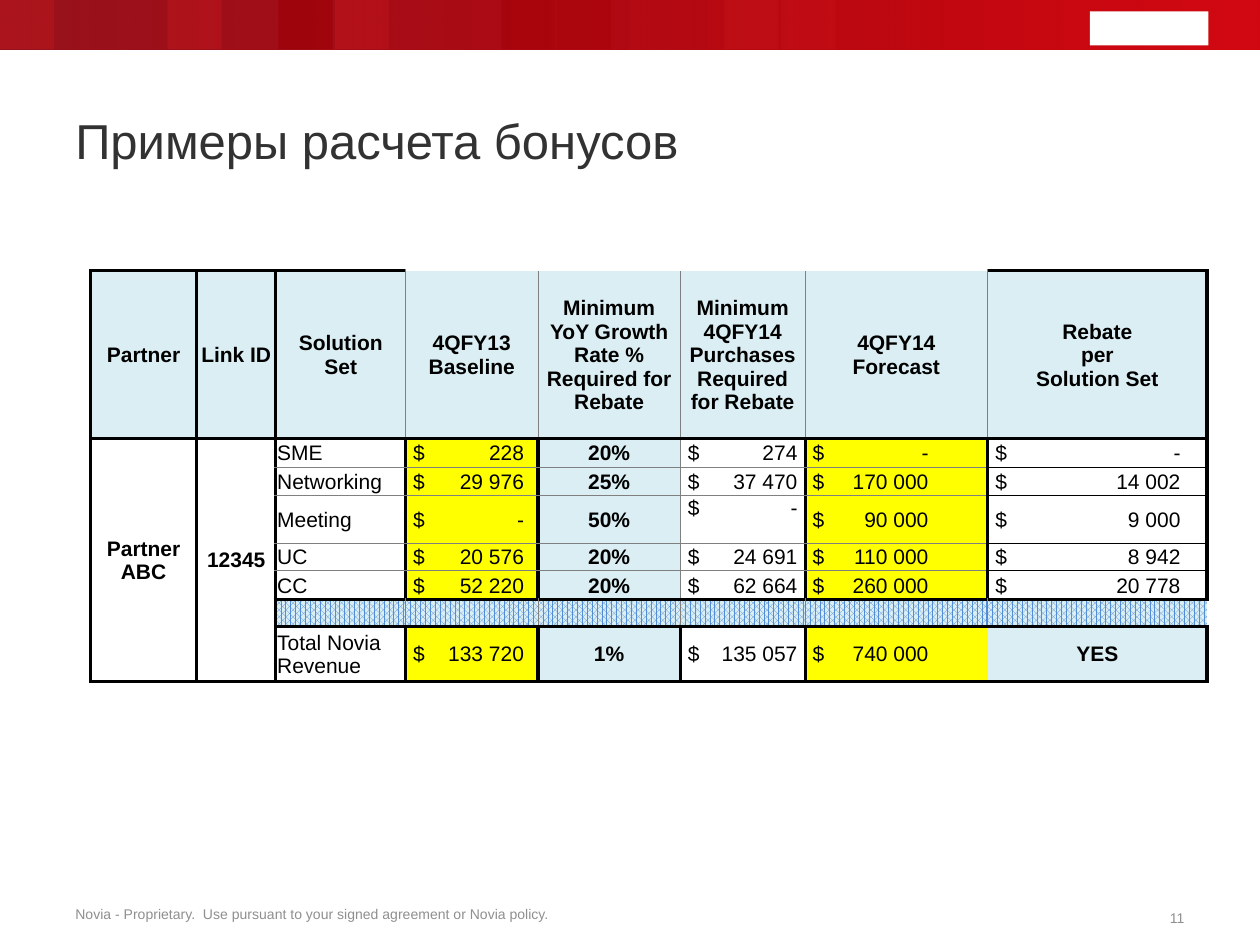
"""Build the slide with the partner rebate calculation table."""
from lxml import etree
from pptx import Presentation
from pptx.dml.color import RGBColor
from pptx.enum.dml import MSO_PATTERN
from pptx.enum.shapes import MSO_SHAPE
from pptx.enum.text import MSO_ANCHOR, PP_ALIGN
from pptx.oxml.ns import qn
from pptx.util import Inches, Pt

RECTANGLE = MSO_SHAPE.RECTANGLE
DOTS = MSO_PATTERN.PERCENT_75
TOP, MIDDLE, BOTTOM = MSO_ANCHOR.TOP, MSO_ANCHOR.MIDDLE, MSO_ANCHOR.BOTTOM
LEFT, CENTER, RIGHT = PP_ALIGN.LEFT, PP_ALIGN.CENTER, PP_ALIGN.RIGHT

COLORS = {
    "dark red": "91050F", "red": "D10811", "light stripe": "FF4747", "dark stripe": "990000",
    "title": "323232", "footer": "8F8F8F", "black": "000000", "gray": "808080",
    "white": "FFFFFF", "pale blue": "DAEEF3", "blue": "538DD5", "yellow": "FFFF00",
}
RGB = {name: RGBColor.from_string(value) for name, value in COLORS.items()}

deck = Presentation()
deck.slide_width, deck.slide_height = Inches(10), Inches(7.5)
page = deck.slides.add_slide(deck.slide_layouts[6])


def add_bar(left, width, color=None, top=-0.01, height=0.4):
    bar = page.shapes.add_shape(RECTANGLE, Inches(left), Inches(top), Inches(width), Inches(height))
    bar.shadow.inherit = False
    bar.line.fill.background()
    if color:
        bar.fill.solid()
        bar.fill.fore_color.rgb = RGB[color]
        return
    bar.fill.gradient()
    bar.fill.gradient_angle = 0
    for stop, name in zip(bar.fill.gradient_stops, ("dark red", "red")):
        stop.color.rgb = RGB[name]
    first_color = next(bar.fill._xPr.iter(qn("a:srgbClr")))
    etree.SubElement(first_color, qn("a:alpha"), val="76000")


def style_paragraph(para, size, color, align=LEFT, bold=False):
    para.alignment = align
    para.font.name = "Arial"
    para.font.size = Pt(size)
    para.font.bold = bold
    para.font.color.rgb = RGB[color]


add_bar(0, 10)
stripes = [(14, "light"), (13, "light"), (10, "dark"), (9, "dark"),
           (6, "light"), (5, "dark"), (3, "light"), (0, "light")]
for step, tone in stripes:
    add_bar(round(step * 0.4425, 2), 0.43, f"{tone} stripe")
add_bar(0, 10)
add_bar(8.65, 0.94, "white", 0.09, 0.27)

texts = [
    ("Novia - Proprietary.  Use pursuant to your signed agreement or Novia policy.",
     (0.5, 7.15, 4.07, 0.22), 8, "footer", LEFT, MIDDLE, False),
    ("11", (9.16, 7.18, 0.34, 0.22), 8, "footer", RIGHT, MIDDLE, False),
    ("Примеры расчета бонусов", (0.5, 0.48, 9, 0.92), 28, "title", LEFT, BOTTOM, True),
]
for text, place, size, color, align, anchor, wrap in texts:
    box = page.shapes.add_textbox(*map(Inches, place))
    box.text_frame.word_wrap = wrap
    box.text_frame.vertical_anchor = anchor
    para = box.text_frame.paragraphs[0]
    para.text = text
    para.line_spacing = 0.9
    style_paragraph(para, size, color, align)

rows = [
    ["Partner", "Link ID", "Solution\vSet", "4QFY13\vBaseline",
     "Minimum\vYoY Growth Rate %\vRequired for Rebate",
     "Minimum 4QFY14 Purchases\vRequired for Rebate", "4QFY14\vForecast",
     "Rebate\vper\vSolution Set"],
    ["Partner ABC", "12345", "SME", "228", "20%", "274", "-", "-"],
    ["", "", "Networking", "29 976", "25%", "37 470", "170 000", "14 002"],
    ["", "", "Meeting", "-", "50%", "-", "90 000", "9 000"],
    ["", "", "UC", "20 576", "20%", "24 691", "110 000", "8 942"],
    ["", "", "CC", "52 220", "20%", "62 664", "260 000", "20 778"],
    [""] * 8,
    ["", "", "Total Novia Revenue", "133 720", "1%", "135 057", "740 000", "YES"],
]
widths = [0.84, 0.63, 1.03, 1.05, 1.13, 0.99, 1.45, 1.74]
heights = [1.33, 0.23, 0.22, 0.38, 0.22, 0.23, 0.19, 0.44]
money_tabs = {3: 0.88, 5: 0.87, 6: 0.92, 7: 1.47}
column_fills = ["white", "white", "white", "yellow", "pale blue", "white", "yellow", "white"]
HEADER, MEETING, BAND, TOTAL = 0, 3, 6, 7

line_styles = {"K": ("black", 2), "k": ("black", 0.5), "g": ("gray", 0.5)}
vertical_lines = ["KKKgggggK"] + ["KKKKKgKKK"] * 5 + ["KKKggggg-", "KKKKKKK-K"]
horizontal_lines = ["KKK----K", "K" * 8] + ["KKgggggk"] * 4 + ["K" * 8] * 3

table_frame = page.shapes.add_table(8, 8, Inches(0.72), Inches(2.15),
                                    Inches(sum(widths)), Inches(sum(heights)))
table = table_frame.table
for column, width in zip(table.columns, widths):
    column.width = Inches(width)
for row, height in zip(table.rows, heights):
    row.height = Inches(height)

for r, row in enumerate(rows):
    for c, text in enumerate(row):
        cell = table.cell(r, c)
        is_money = r not in (HEADER, BAND) and c in money_tabs and text != "YES"
        is_bold = not is_money and (r == HEADER or c != 2)
        cell.margin_left = Inches(0.06 if is_money else 0.01)
        cell.margin_right = cell.margin_top = Inches(0.01)
        cell.margin_bottom = 0
        cell.vertical_anchor = TOP if (r, c) == (MEETING, 5) else MIDDLE

        para = cell.text_frame.paragraphs[0]
        para.text = f"$\t{text}" if is_money else text
        style_paragraph(para, 12, "black", CENTER if is_bold else LEFT, is_bold)
        if is_money:
            tab_list = etree.Element(qn("a:tabLst"))
            etree.SubElement(tab_list, qn("a:tab"), pos=str(Inches(money_tabs[c])), algn="r")
            para.font._element.addprevious(tab_list)

        if r == BAND and c > 1:
            cell.fill.patterned()
            cell.fill.pattern = DOTS
            cell.fill.fore_color.rgb = RGB["blue"]
            cell.fill.back_color.rgb = RGB["pale blue"]
        else:
            cell.fill.solid()
            is_pale = r == HEADER or text == "YES"
            cell.fill.fore_color.rgb = RGB["pale blue" if is_pale else column_fills[c]]

        sides = {"L": vertical_lines[r][c], "R": vertical_lines[r][c + 1],
                 "T": horizontal_lines[r][c], "B": horizontal_lines[r + 1][c]}
        properties = cell._tc.get_or_add_tcPr()
        for position, (side, style) in enumerate(sides.items()):
            line = etree.Element(qn(f"a:ln{side}"))
            properties.insert(position, line)
            if style == "-":
                etree.SubElement(line, qn("a:noFill"))
                continue
            color, weight = line_styles[style]
            line.set("w", str(Pt(weight)))
            paint = etree.SubElement(line, qn("a:solidFill"))
            etree.SubElement(paint, qn("a:srgbClr"), val=COLORS[color])

for c in (0, 1):
    table.cell(1, c).merge(table.cell(TOTAL, c))

deck.save("out.pptx")
